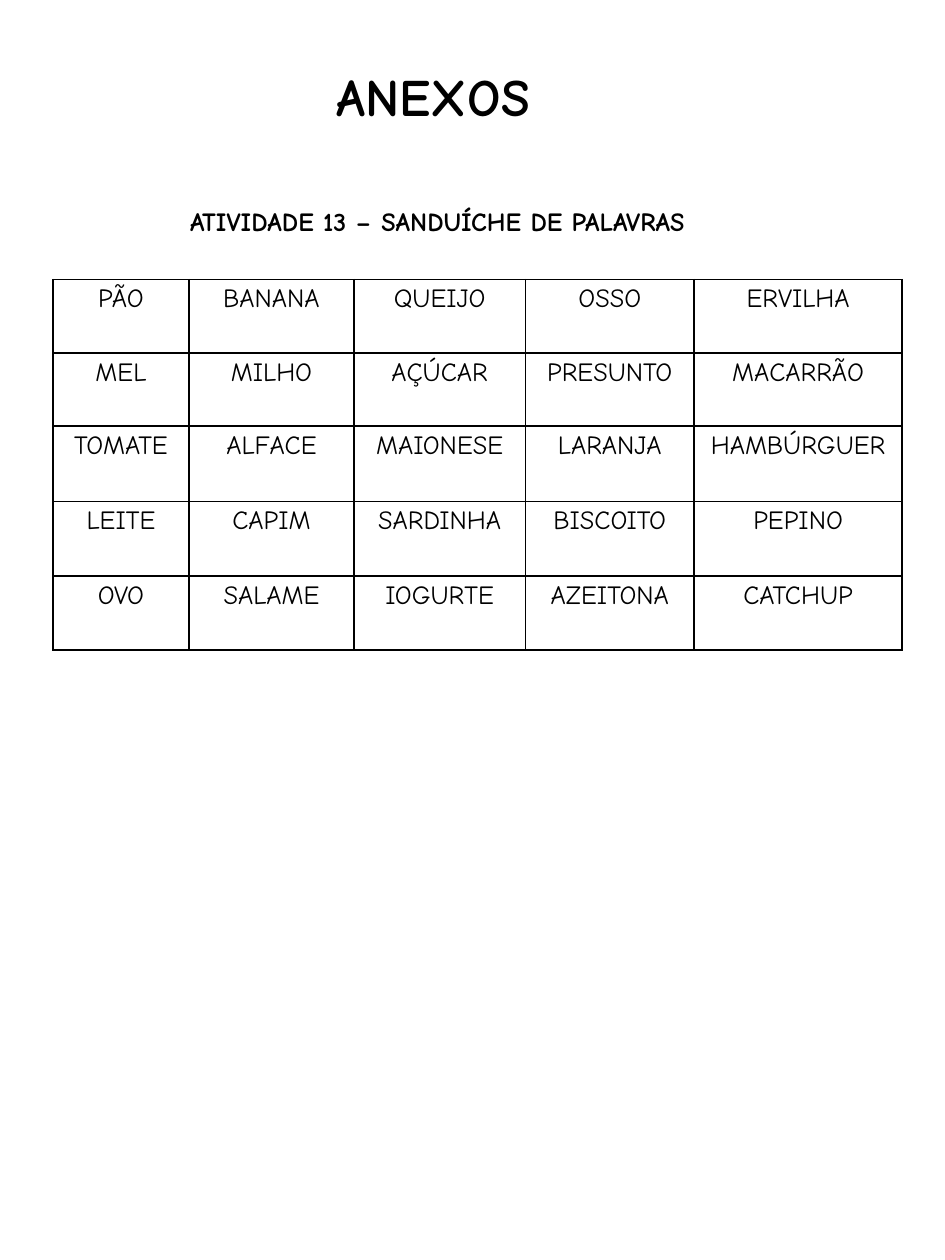
from pptx import Presentation
from pptx.dml.color import RGBColor
from pptx.enum.text import MSO_ANCHOR, PP_ALIGN
from pptx.oxml import parse_xml
from pptx.oxml.ns import nsdecls
from pptx.util import Inches, Pt

BLACK = RGBColor(0, 0, 0)
FONT = "Comic Neue"
TITLE_LAYOUT = 5

WORDS = [
    ["PÃO", "BANANA", "QUEIJO", "OSSO", "ERVILHA"],
    ["MEL", "MILHO", "AÇÚCAR", "PRESUNTO", "MACARRÃO"],
    ["TOMATE", "ALFACE", "MAIONESE", "LARANJA", "HAMBÚRGUER"],
    ["LEITE", "CAPIM", "SARDINHA", "BISCOITO", "PEPINO"],
    ["OVO", "SALAME", "IOGURTE", "AZEITONA", "CATCHUP"],
]
COLUMN_WIDTHS = [1.08, 1.31, 1.36, 1.34, 1.65]
ROW_HEIGHTS = [0.58, 0.58, 0.6, 0.59, 0.59]


def add_text(frame, text, size, align, bold=False):
    para = frame.paragraphs[0]
    para.alignment = align
    span = para.add_run()
    span.text = text
    font = span.font
    font.name, font.size, font.bold = FONT, Pt(size), bold
    font.color.rgb = BLACK
    return para


def fill_heading(box, text, size, left, top, width, height):
    box.left, box.top = Inches(left), Inches(top)
    box.width, box.height = Inches(width), Inches(height)
    frame = box.text_frame
    frame.word_wrap = True
    frame.vertical_anchor = MSO_ANCHOR.TOP
    add_text(frame, text, size, PP_ALIGN.LEFT, bold=True)


def set_borders(cell):
    """Draw a thin black line on all four sides, placed before the cell's fill."""
    properties = cell._tc.get_or_add_tcPr()
    for index, side in enumerate(("lnL", "lnR", "lnT", "lnB")):
        line = parse_xml(
            f'<a:{side} {nsdecls("a")} w="{Pt(1)}"><a:solidFill>'
            f'<a:srgbClr val="{BLACK}"/></a:solidFill></a:{side}>'
        )
        properties.insert(index, line)


def format_cell(cell, word):
    cell.margin_left = cell.margin_right = Inches(0.07)
    cell.margin_top = cell.margin_bottom = 0
    cell.fill.background()
    set_borders(cell)
    para = add_text(cell.text_frame, word, 15, PP_ALIGN.CENTER)
    para.line_spacing = 1.15


def add_word_table(slide):
    table = slide.shapes.add_table(
        len(WORDS), len(COLUMN_WIDTHS), Inches(0.42), Inches(2.22),
        Inches(sum(COLUMN_WIDTHS)), Inches(sum(ROW_HEIGHTS)),
    ).table
    table.first_row = table.horz_banding = False
    for column, width in zip(table.columns, COLUMN_WIDTHS):
        column.width = Inches(width)
    for row, height, words in zip(table.rows, ROW_HEIGHTS, WORDS):
        row.height = Inches(height)
        for cell, word in zip(row.cells, words):
            format_cell(cell, word)


def main():
    deck = Presentation()
    deck.slide_width, deck.slide_height = Inches(7.5), Inches(10)
    slide = deck.slides.add_slide(deck.slide_layouts[TITLE_LAYOUT])
    add_word_table(slide)
    fill_heading(slide.shapes.title, "ANEXOS", 30, 2.57, 0.46, 2.05, 0.61)
    subtitle = slide.shapes.add_textbox(0, 0, 0, 0)
    fill_heading(subtitle, "ATIVIDADE 13 – SANDUÍCHE DE PALAVRAS", 15,
                 1.41, 1.58, 4.98, 0.35)
    deck.save("out.pptx")


if __name__ == "__main__":
    main()
